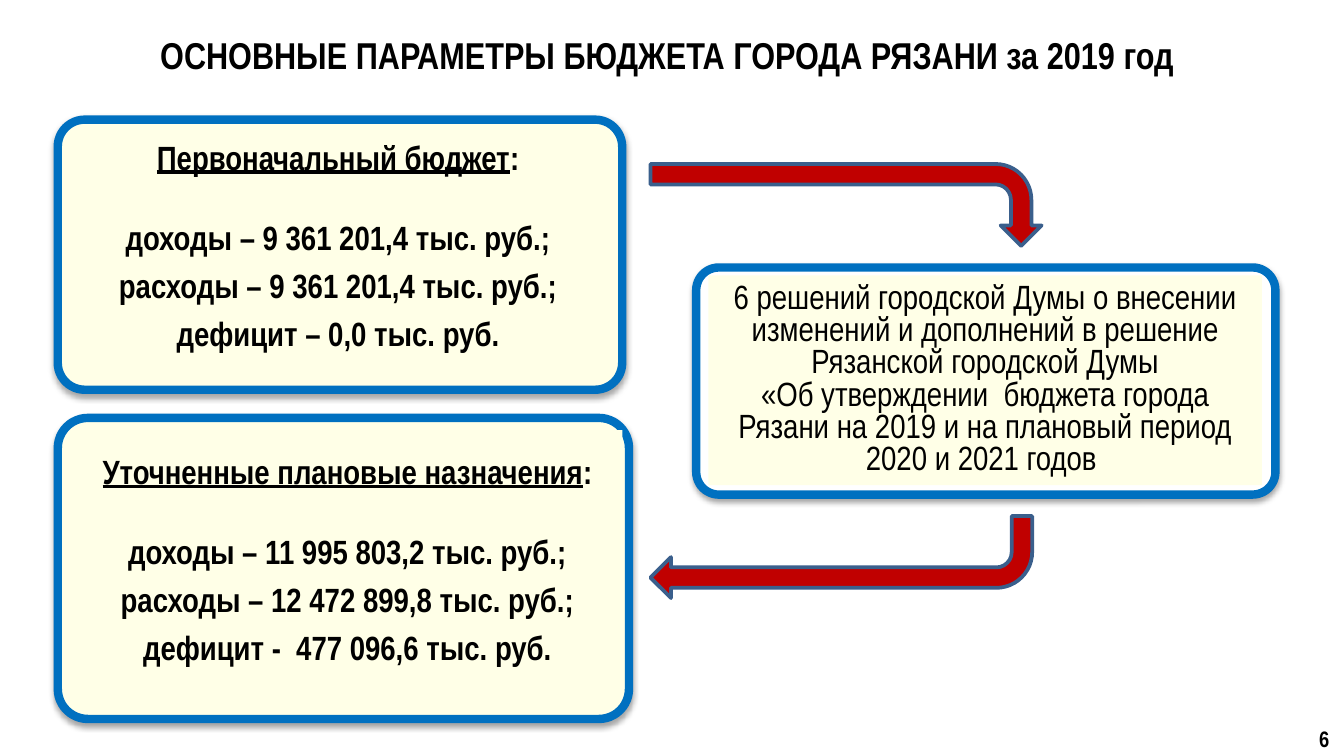
from dataclasses import dataclass
from typing import Any

import lxml.etree
import pptx
import pptx.dml.color
import pptx.enum.shapes
import pptx.enum.text
import pptx.oxml.ns
import pptx.util

Inches = pptx.util.Inches
Pt = pptx.util.Pt
Shape = pptx.enum.shapes.MSO_SHAPE
Align = pptx.enum.text.PP_ALIGN
Anchor = pptx.enum.text.MSO_ANCHOR

SLIDE_WIDTH = 10
SLIDE_HEIGHT = SLIDE_WIDTH * 9 / 16
FONT = "Arial Narrow"
BLACK, CREAM, WHITE = "000000", "FFFFE7", "FFFFFF"
BLUE, RED, STEEL = "0070C0", "C00000", "3A5F8C"
Box = tuple[float, float, float, float]


@dataclass(frozen=True)
class Line:
    text: str
    heading: bool = False
    bold: bool = True
    spacing: float = 0.9
    after: float = 6.3


@dataclass(frozen=True)
class Panel:
    frame: Box
    body: Box
    fill: str
    lines: tuple[Line, ...]


@dataclass(frozen=True)
class Arrow:
    box: Box
    rotation: int


PANELS = (
    Panel((0.43, 0.89, 4.2, 2.01), (0.54, 0.95, 3.95, 1.88), CREAM, (
        Line("Первоначальный бюджет", heading=True, spacing=0.5, after=25.5),
        Line("доходы – 9 361 201,4 тыс. руб.;"),
        Line("расходы – 9 361 201,4 тыс. руб.;"),
        Line("дефицит – 0,0 тыс. руб."),
    )),
    Panel((5.18, 1.99, 4.31, 1.69), (5.27, 2.05, 4.12, 1.56), WHITE, (
        Line("6 решений городской Думы о внесении изменений и дополнений в решение "
             "Рязанской городской Думы\v«Об утверждении  бюджета города Рязани "
             "на 2019 и на плановый период 2020 и 2021 годов ",
             bold=False, spacing=0.8),
    )),
    Panel((0.43, 3.11, 4.25, 2.24), (0.54, 3.2, 4.09, 1.96), CREAM, (
        Line("Уточненные плановые назначения", heading=True, after=23.5),
        Line("доходы – 11 995 803,2 тыс. руб.;"),
        Line("расходы – 12 472 899,8 тыс. руб.;"),
        Line("дефицит -  477 096,6 тыс. руб."),
    )),
)

ARROWS = (
    Arrow((5.99, 0.07, 0.61, 2.91), 90),
    Arrow((4.84, 3.84, 2.84, 0.61), 180),
)


def apply(target: Any, values: dict[str, Any]) -> None:
    for name, value in values.items():
        setattr(target, name, value)


def color(value: str) -> pptx.dml.color.RGBColor:
    return pptx.dml.color.RGBColor.from_string(value)


def place(box: Box) -> list[int]:
    return [Inches(length) for length in box]


def format_font(font: Any, size: float, bold: bool) -> None:
    apply(font, {"name": FONT, "size": Pt(size), "bold": bold})
    font.color.rgb = color(BLACK)


def format_frame(frame: Any, anchor: Any, side: float, edge: float) -> None:
    apply(frame, {
        "word_wrap": True,
        "auto_size": pptx.enum.text.MSO_AUTO_SIZE.NONE,
        "vertical_anchor": anchor,
        "margin_left": Inches(side),
        "margin_right": Inches(side),
        "margin_top": Inches(edge),
        "margin_bottom": Inches(edge),
    })


def add_filled(shapes: Any, kind: Any, box: Box, fill: str,
               outline: str = "", width: float = 0) -> Any:
    shape = shapes.add_shape(kind, *place(box))
    shape.fill.solid()
    shape.fill.fore_color.rgb = color(fill)
    if outline:
        shape.line.color.rgb = color(outline)
        shape.line.width = Pt(width)
    else:
        shape.line.fill.background()
    shape.shadow.inherit = False
    return shape


def add_shadow(shape: Any) -> None:
    qn = pptx.oxml.ns.qn
    effects = shape.element.spPr.find(qn("a:effectLst"))
    shadow = lxml.etree.SubElement(effects, qn("a:outerShdw"), {
        "blurRad": str(Pt(3.1)), "dist": str(Pt(1.8)),
        "dir": "5400000", "rotWithShape": "0",
    })
    tint = lxml.etree.SubElement(shadow, qn("a:srgbClr"), val=BLACK)
    lxml.etree.SubElement(tint, qn("a:alpha"), val="35000")


def write_line(paragraph: Any, line: Line) -> None:
    apply(paragraph, {
        "text": line.text,
        "alignment": Align.CENTER,
        "line_spacing": line.spacing,
        "space_after": Pt(line.after),
    })
    if line.heading:
        paragraph.runs[0].font.underline = True
        paragraph.add_run().text = ":"
    for run in paragraph.runs:
        format_font(run.font, 18, line.bold)


def draw_panel(slide: Any, panel: Panel) -> None:
    shapes = slide.shapes.add_group_shape().shapes
    border = add_filled(shapes, Shape.ROUNDED_RECTANGLE, panel.frame,
                        panel.fill, BLUE, 4.5)
    border.adjustments[0] = 0.1
    add_shadow(border)
    frame = add_filled(shapes, Shape.RECTANGLE, panel.body, CREAM).text_frame
    format_frame(frame, Anchor.MIDDLE, 0.07, 0.07)
    for index, line in enumerate(panel.lines):
        write_line(frame.add_paragraph() if index else frame.paragraphs[0], line)


def draw_arrow(slide: Any, arrow: Arrow) -> None:
    shape = add_filled(slide.shapes, Shape.BENT_ARROW, arrow.box, RED, STEEL, 2)
    shape.rotation = arrow.rotation


def write_label(label: Any, text: str, size: float, alignment: Any, anchor: Any) -> None:
    format_frame(label.text_frame, anchor, 0.1, 0.05)
    paragraph = label.text_frame.paragraphs[0]
    apply(paragraph, {"text": text, "alignment": alignment})
    format_font(paragraph.runs[0].font, size, True)


def main() -> None:
    deck = pptx.Presentation()
    apply(deck, {"slide_width": Inches(SLIDE_WIDTH),
                 "slide_height": Inches(SLIDE_HEIGHT)})
    slide = deck.slides.add_slide(deck.slide_layouts.get_by_name("Title Only"))

    heading = slide.shapes.title
    apply(heading, dict(zip(("left", "top", "width", "height"),
                            place((0.43, 0.27, 9.07, 0.27)))))
    write_label(heading, "ОСНОВНЫЕ ПАРАМЕТРЫ БЮДЖЕТА ГОРОДА РЯЗАНИ за 2019 год",
                20, Align.CENTER, Anchor.MIDDLE)

    for panel in PANELS:
        draw_panel(slide, panel)
    for arrow in ARROWS:
        draw_arrow(slide, arrow)

    page_number = slide.shapes.add_textbox(*place((9.6, 5.35, 0.39, 0.24)))
    write_label(page_number, "6", 12, Align.RIGHT, Anchor.TOP)
    deck.save("out.pptx")


if __name__ == "__main__":
    main()
